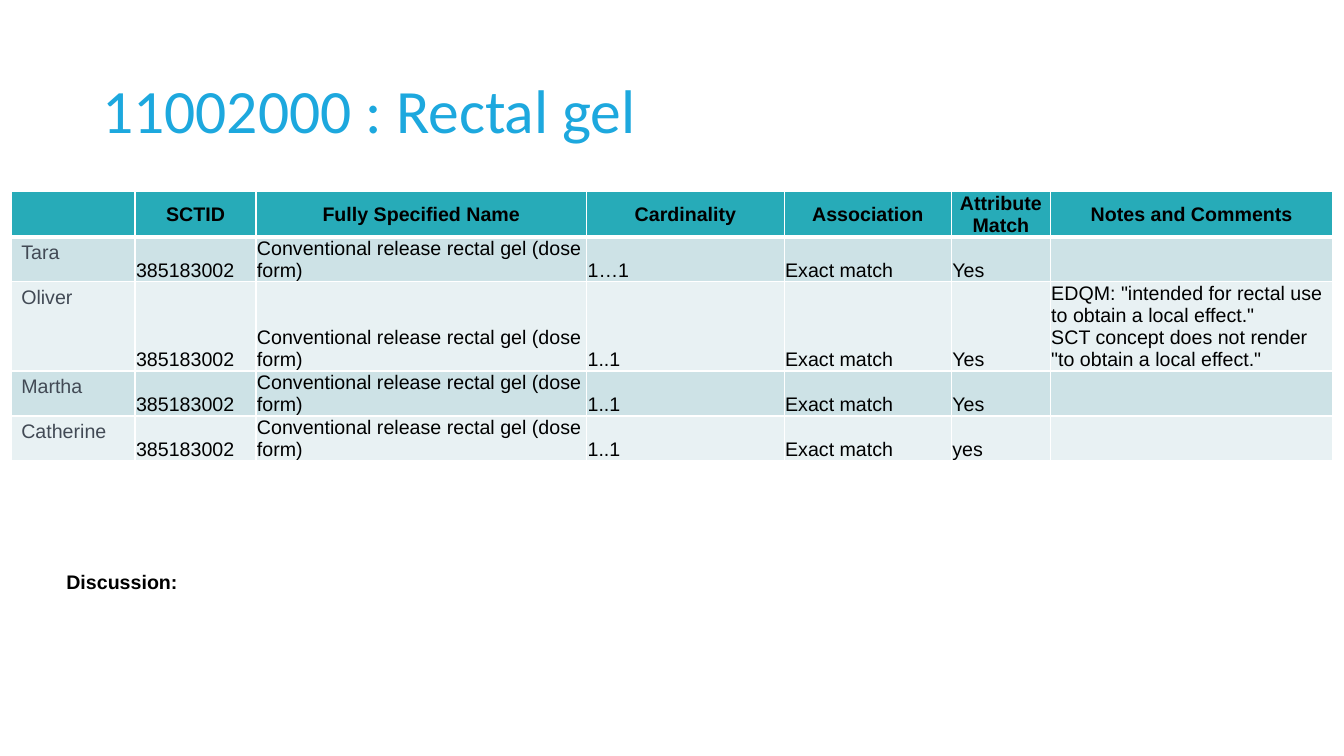
from pptx import Presentation
from pptx.dml.color import RGBColor
from pptx.enum.text import MSO_ANCHOR, MSO_AUTO_SIZE, PP_ALIGN
from pptx.oxml.ns import qn
from pptx.util import Pt
from lxml.etree import SubElement

COLORS = {
    "title": "1DA8DE", "head": "27ABB8", "odd": "CDE2E6", "even": "E8F1F3",
    "name": "424A55", "text": "000000", "line": "FFFFFF",
}
WIDTHS = [88.5, 86.4, 236.2, 141.1, 119.5, 70.6, 202]
HEADS = ["", "SCTID", "Fully Specified Name", "Cardinality", "Association",
         "Attribute Match", "Notes and Comments"]
NOTE = ('EDQM: "intended for rectal use to obtain a local effect."\n'
        'SCT concept does not render "to obtain a local effect."')
VOTES = [("Tara", "1…1", "Yes", ""), ("Oliver", "1..1", "Yes", NOTE),
         ("Martha", "1..1", "Yes", ""), ("Catherine", "1..1", "yes", "")]
FORM = "Conventional release rectal gel (dose form)"


class Deck:
    def __init__(self):
        self.prs = Presentation()
        self.prs.slide_width, self.prs.slide_height = Pt(960), Pt(540)
        self.slide = self.prs.slides.add_slide(self.prs.slide_layouts[6])

    def color(self, name):
        return RGBColor.from_string(COLORS[name])

    def style(self, para, size=14, face="Arial", color="text", bold=False):
        for run in para.runs:
            font = run.font
            font.size, font.name, font.bold = Pt(size), face, bold
            font.color.rgb = self.color(color)

    def text(self, words, left, top, width, height, anchor=MSO_ANCHOR.TOP,
             fit=MSO_AUTO_SIZE.NONE, **look):
        box = self.slide.shapes.add_textbox(
            Pt(left), Pt(top), Pt(width), Pt(height))
        frame = box.text_frame
        frame.word_wrap = True
        frame.auto_size = fit
        frame.vertical_anchor = anchor
        para = frame.paragraphs[0]
        para.text = words
        self.style(para, **look)
        return para

    def edge(self, cell, side, width):
        line = SubElement(cell._tc.get_or_add_tcPr(), qn("a:ln" + side),
                          w=str(Pt(width)))
        fill = SubElement(line, qn("a:solidFill"))
        SubElement(fill, qn("a:srgbClr"), val=COLORS["line"])

    def cell(self, cell, words, row, col):
        # Borders must come before the fill in the cell properties.
        for side in "LRTB":
            thick = (row, side) in ((0, "B"), (1, "T"))
            self.edge(cell, side, 3 if thick else 1)
        shade = "head" if row == 0 else "odd" if row % 2 else "even"
        cell.fill.solid()
        cell.fill.fore_color.rgb = self.color(shade)
        if not words:
            return
        para = cell.text_frame.paragraphs[0]
        para.text = words
        self.style(para, color="text" if col else "name", bold=row == 0)
        if row == 0:
            para.alignment = PP_ALIGN.CENTER
        if col:
            cell.vertical_anchor = MSO_ANCHOR.BOTTOM if row else MSO_ANCHOR.MIDDLE
            cell.margin_left = cell.margin_right = cell.margin_top = Pt(0.7)
            cell.margin_bottom = Pt(0)

    def table(self, rows, widths, left, top, height):
        grid = self.slide.shapes.add_table(
            len(rows), len(widths), Pt(left), Pt(top),
            Pt(sum(widths)), Pt(height * len(rows))).table
        for col, width in zip(grid.columns, widths):
            col.width = Pt(width)
        for r, row in enumerate(rows):
            grid.rows[r].height = Pt(height)
            for c, words in enumerate(row):
                self.cell(grid.cell(r, c), words, r, c)


def main():
    deck = Deck()
    title = deck.text("11002000 : Rectal gel", 66, 28.8, 828, 104.4,
                      anchor=MSO_ANCHOR.MIDDLE, size=44, face="Calibri",
                      color="title")
    title.line_spacing = 0.9
    rows = [HEADS] + [[name, "385183002", FORM, count, "Exact match", match, note]
                      for name, count, match, note in VOTES]
    deck.table(rows, WIDTHS, left=8, top=137, height=30)
    deck.text("Discussion:", 40.3, 403.2, 853, 41,
              fit=MSO_AUTO_SIZE.SHAPE_TO_FIT_TEXT, bold=True)
    deck.prs.save("out.pptx")


if __name__ == "__main__":
    main()
